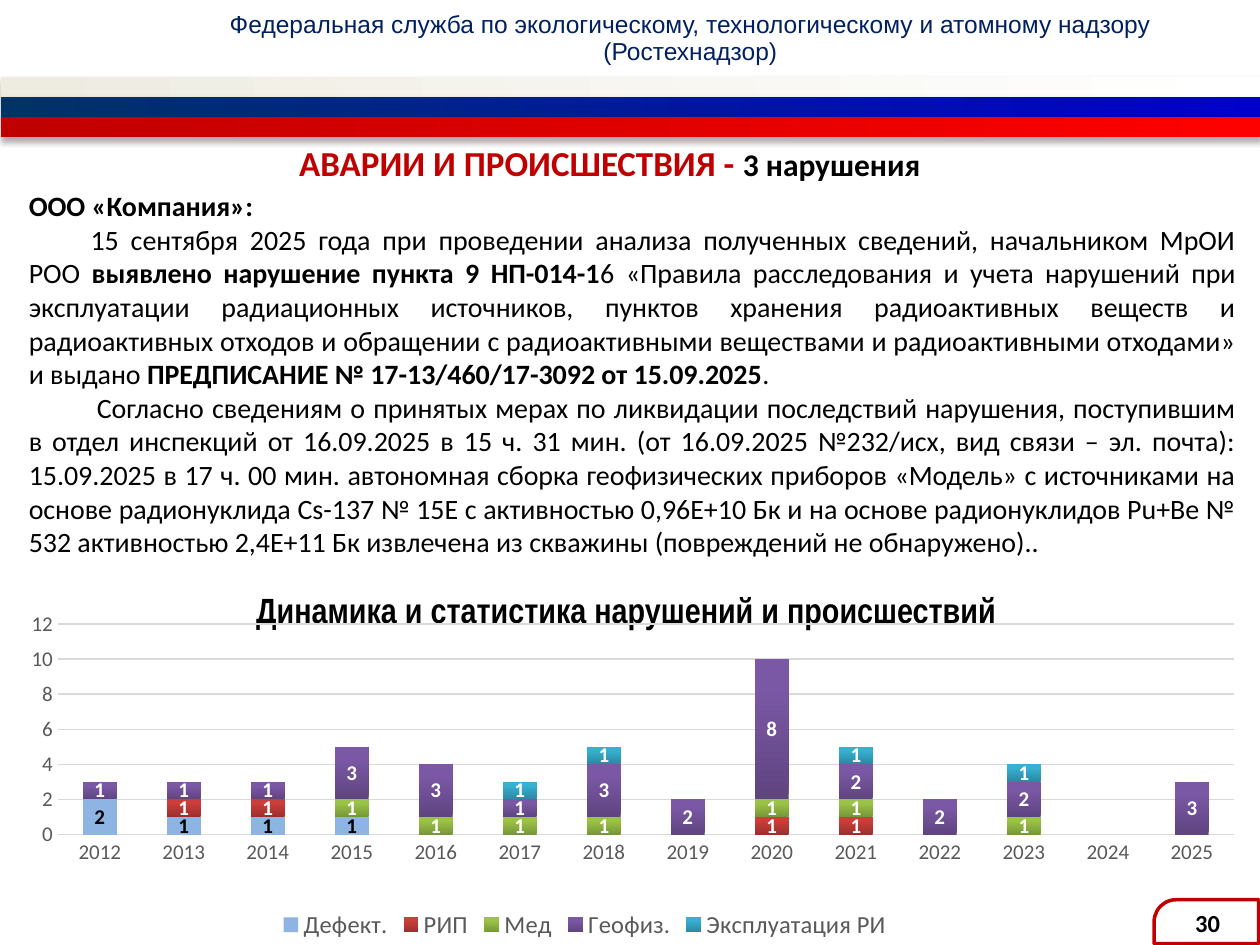
from dataclasses import dataclass
from lxml.etree import SubElement
from pptx import Presentation
from pptx.chart.data import CategoryChartData
from pptx.dml.color import RGBColor
from pptx.enum.chart import XL_CHART_TYPE, XL_LEGEND_POSITION, XL_TICK_MARK
from pptx.enum.shapes import MSO_SHAPE
from pptx.enum.text import MSO_ANCHOR, PP_ALIGN
from pptx.oxml import parse_xml
from pptx.oxml.ns import nsdecls, qn
from pptx.util import Inches, Pt


@dataclass(frozen=True)
class Theme:
    head: str = "Arial"
    narrow: str = "Arial Narrow"
    body: str = "Calibri"
    black: str = "000000"
    white: str = "FFFFFF"
    navy: str = "002060"
    red: str = "C00000"
    gray: str = "595959"
    grid: str = "D9D9D9"
    big: int = 20
    mid: int = 18
    text: int = 16
    small: int = 14
    tiny: int = 12


def rgb(code):
    return RGBColor.from_string(code)


class Deck:
    def __init__(self, theme):
        self.theme = theme
        self.prs = Presentation()
        self.prs.slide_width, self.prs.slide_height = Inches(10), Inches(7.5)
        self.slide = self.prs.slides.add_slide(self.prs.slide_layouts[5])

    def style(self, font, size, color, bold=False, name=None):
        font.name, font.size, font.bold = name or self.theme.body, Pt(size), bold
        font.color.rgb = rgb(color)

    def blend(self, fill, colors, angle=0, end=1.0):
        fill.gradient()
        fill.gradient_angle = angle
        for stop, color, place in zip(fill.gradient_stops, colors, (0, end)):
            stop.color.rgb, stop.position = rgb(color), place

    def para(self, frame, runs, align, first=False, indent=0, lead=None):
        """Add a paragraph; each run is (text, size, color, bold, font)."""
        par = frame.paragraphs[0] if first else frame.add_paragraph()
        par.alignment = align
        if indent:
            par._p.get_or_add_pPr().set("indent", str(Inches(indent)))
        if lead:
            par.line_spacing = Pt(lead)
        for text, *look in runs:
            run = par.add_run()
            run.text = text
            self.style(run.font, *look)

    def fill_box(self, shape, box, paras, align, anchor, lead=None):
        shape.left, shape.top, shape.width, shape.height = map(Inches, box)
        frame = shape.text_frame
        frame.word_wrap, frame.vertical_anchor = True, anchor
        for i, (runs, indent) in enumerate(paras):
            self.para(frame, runs, align, i == 0, indent, lead)
        return frame

    def text(self, box, paras, align=PP_ALIGN.CENTER, anchor=MSO_ANCHOR.TOP, lead=None):
        shape = self.slide.shapes.add_textbox(*map(Inches, box))
        return self.fill_box(shape, box, paras, align, anchor, lead)

    def title(self, box, runs):
        self.fill_box(self.slide.shapes.title, box, [(runs, 0)],
                      PP_ALIGN.CENTER, MSO_ANCHOR.MIDDLE)

    def band(self, box, colors):
        shape = self.slide.shapes.add_shape(MSO_SHAPE.RECTANGLE, *map(Inches, box))
        self.blend(shape.fill, colors)
        shape.line.fill.background()
        shape.shadow.inherit = False
        effect = shape._element.spPr.find(qn("a:effectLst"))
        effect.append(parse_xml(
            f'<a:outerShdw {nsdecls("a")} blurRad="{Pt(3.5)}" dist="{Pt(2.2)}" '
            'dir="5400000" rotWithShape="0"><a:srgbClr val="000000">'
            '<a:alpha val="32000"/></a:srgbClr></a:outerShdw>'))

    def tab(self, box):
        shape = self.slide.shapes.add_shape(MSO_SHAPE.ROUND_1_RECTANGLE, *map(Inches, box))
        shape.rotation = 270
        shape.adjustments[0] = 0.5
        shape.fill.background()
        shape.line.color.rgb, shape.line.width = rgb(self.theme.red), Pt(2)
        shape.shadow.inherit = False

    def axis(self, axis):
        axis.major_tick_mark = axis.minor_tick_mark = XL_TICK_MARK.NONE
        self.style(axis.tick_labels.font, self.theme.tiny, self.theme.gray)

    def chart(self, box, cats, rows, plot_box):
        """Stacked columns; each row is (name, {category: value}, colors, label color)."""
        t = self.theme
        data = CategoryChartData()
        data.categories = cats
        for name, vals, *_ in rows:
            data.add_series(name, [vals.get(cat) for cat in cats])
        chart = self.slide.shapes.add_chart(
            XL_CHART_TYPE.COLUMN_STACKED, *map(Inches, box), data).chart
        self.style(chart.font, 10, t.black)
        chart.has_title = False

        # Axes and grid
        cat, val = chart.category_axis, chart.value_axis
        self.axis(cat)
        self.axis(val)
        cat.format.line.color.rgb, cat.format.line.width = rgb(t.grid), Pt(1)
        val.format.line.fill.background()
        val.minimum_scale, val.maximum_scale, val.major_unit = 0, 12, 2
        grid = val.major_gridlines.format.line
        grid.color.rgb, grid.width = rgb(t.grid), Pt(0.75)

        # Legend
        chart.has_legend = True
        chart.legend.position = XL_LEGEND_POSITION.BOTTOM
        chart.legend.include_in_layout = False
        self.style(chart.legend.font, t.small, t.gray)

        # Columns and their labels
        plot = chart.plots[0]
        plot.gap_width, plot.overlap, plot.vary_by_categories = 150, 100, False
        for series, (_, _, colors, ink) in zip(plot.series, rows):
            fill = series.format.fill
            if len(colors) == 1:
                fill.solid()
                fill.fore_color.rgb = rgb(colors[0])
            else:
                self.blend(fill, colors, 90, 0.8)
            labels = series.data_labels
            labels.show_value = True
            self.style(labels.font, t.tiny, ink, True)

        # Fixed inner plot area
        area = chart._chartSpace.chart.plotArea
        for old in area.findall(qn("c:layout")):
            area.remove(old)
        layout = parse_xml(f'<c:layout {nsdecls("c")}/>')
        area.insert(0, layout)
        manual = SubElement(layout, qn("c:manualLayout"))
        parts = [("layoutTarget", "inner"), ("xMode", "edge"), ("yMode", "edge")]
        for tag, value in parts + list(zip("xywh", plot_box)):
            SubElement(manual, qn(f"c:{tag}")).set("val", str(value))


def main():
    t = Theme()
    deck = Deck(t)

    # Agency header and flag bands
    lines = ("Федеральная служба по экологическому, технологическому и атомному надзору",
             "(Ростехнадзор)")
    frame = deck.text((0.98, 0.1, 9, 0.43),
                      [([(line, t.small, t.navy, False, t.head)], 0) for line in lines], lead=15)
    frame.margin_top = frame.margin_bottom = 0
    flag = (("EEECE1", "FFFFFF"), ("003366", "0000CC"), ("C00000", "FF0000"))
    for i, colors in enumerate(flag):
        deck.band((0.01, 0.61 + i * 0.16, 9.99, 0.16), colors)

    # Page number
    deck.tab((9.4, 6.9, 0.35, 0.83))
    deck.text((9.17, 7.14, 0.83, 0.36), [([("30", t.small, t.black, True)], 0)],
              anchor=MSO_ANCHOR.MIDDLE)

    # Chart title and chart
    deck.title((-0.03, 4.57, 10, 0.54), [
        ("Динамика и статистика нарушений и происшествий", t.big, t.black, True, t.narrow)])
    years = [str(year) for year in range(2012, 2026)]
    geo = dict(zip(years, (1, 1, 1, 3, 3, 1, 3, 2, 8, 2, 2, 2, None, 3)))

    def ones(*marks):
        return {f"20{mark}": 1 for mark in marks}

    deck.chart((-0.51, 4.46, 10.31, 3.04), years, [
        ("Дефект.", {"2012": 2, **ones(13, 14, 15)}, ("8EB4E3",), t.black),
        ("РИП", ones(13, 14, 20, 21), ("9C2F2D", "CB3E3A"), t.white),
        ("Мед", ones(15, 16, 17, 18, 20, 21, 23), ("779737", "9BC348"), t.white),
        ("Геофиз.", geo, ("5F4480", "7B58A6"), t.white),
        ("Эксплуатация РИ", ones(17, 18, 21, 23), ("2A88A2", "37B1D2"), t.white),
    ], (0.094, 0.162, 0.906, 0.55))

    # Section heading
    deck.text((0.67, 1.07, 8.34, 0.44), [([
        ("АВАРИИ И ПРОИСШЕСТВИЯ - ", t.big, t.red, True),
        ("3 нарушения", t.mid, t.black, True)], 0)])

    # Report text
    def plain(text, bold=False):
        return text, t.text, t.black, bold

    deck.text((0.13, 1.45, 9.78, 3.06), [
        ([plain("ООО «Компания»:", True)], 0),
        ([plain("15 сентября 2025 года при проведении анализа полученных сведений, "
                "начальником МрОИ РОО "),
          plain("выявлено нарушение пункта 9 НП-014-1", True),
          plain("6 «Правила расследования и учета нарушений при эксплуатации радиационных "
                "источников, пунктов хранения радиоактивных веществ и радиоактивных отходов "
                "и обращении с радиоактивными веществами и радиоактивными отходами» и выдано "),
          plain("ПРЕДПИСАНИЕ № 17-13/460/17-3092 от 15.09.2025", True),
          plain(".")], 0.49),
        ([plain("Согласно сведениям о принятых мерах по ликвидации последствий нарушения, "
                "поступившим в отдел инспекций от 16.09.2025 в 15 ч. 31 мин. (от 16.09.2025 "
                "№232/исх, вид связи – эл. почта): 15.09.2025 в 17 ч. 00 мин. автономная "
                "сборка геофизических приборов «Модель» с источниками на основе радионуклида "
                "Cs-137 № 15E с активностью 0,96Е+10 Бк и на основе радионуклидов Рu+Ве № 532 "
                "активностью 2,4Е+11 Бк извлечена из скважины (повреждений не обнаружено)..")],
         0.54),
    ], PP_ALIGN.JUSTIFY)
    deck.prs.save("out.pptx")


if __name__ == "__main__":
    main()
